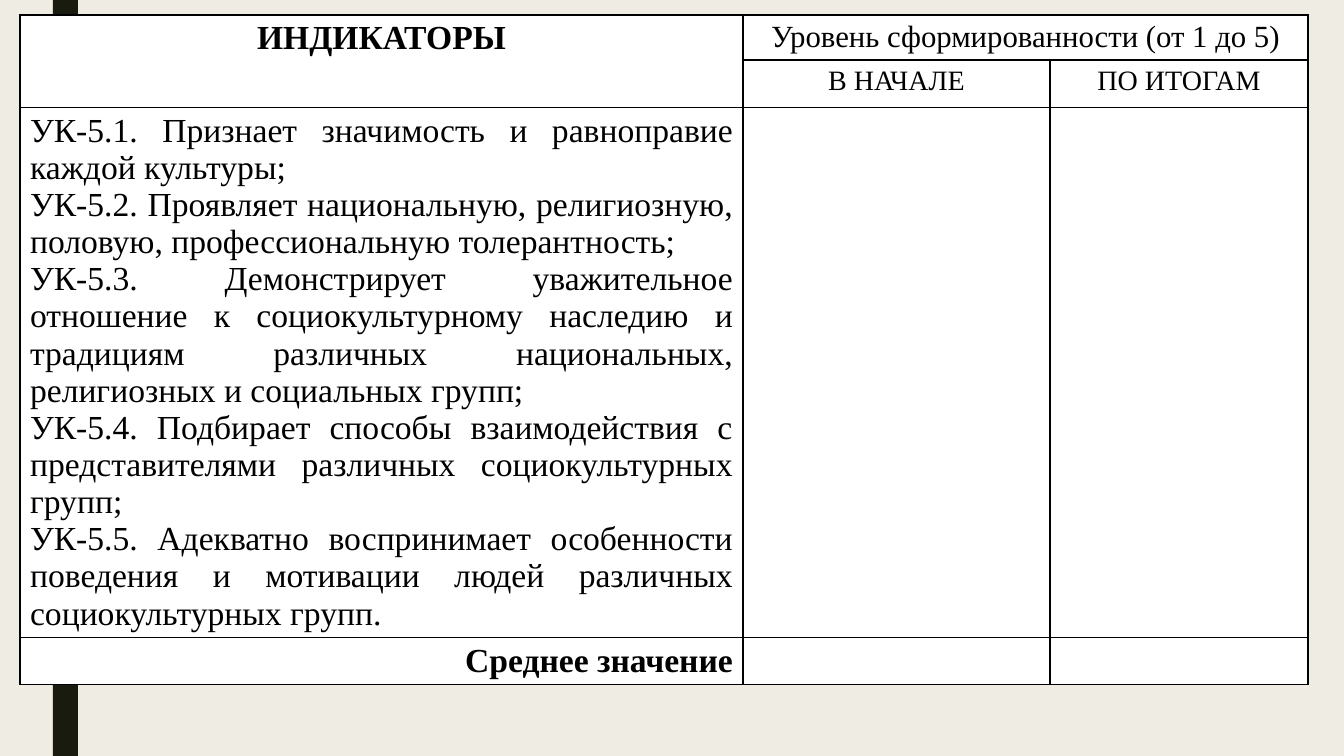
import dataclasses

import pptx
import pptx.dml.color
import pptx.enum.shapes
import pptx.enum.text
import pptx.oxml
import pptx.oxml.ns
import pptx.util

ALIGN = pptx.enum.text.PP_ALIGN
PX = 914400 / 100.8


@dataclasses.dataclass(frozen=True)
class Theme:
    """Colours, font and type sizes of the slide."""

    background: str = "EFEDE3"
    stripe: str = "191B0E"
    cell: str = "FFFFFF"
    ink: str = "000000"
    font: str = "Times New Roman"
    body: int = 24
    level: int = 22
    stage: int = 20
    border: int = 1


class SlideBuilder:
    """Draws themed elements on the current slide, measured in px."""

    def __init__(self, theme, page):
        self.theme = theme
        self.page = page

    def px(self, length):
        return pptx.util.Emu(round(length * PX))

    def colour(self, fill, value):
        fill.solid()
        fill.fore_color.rgb = pptx.dml.color.RGBColor.from_string(value)

    def background(self):
        self.colour(self.page.background.fill, self.theme.background)

    def stripe(self, left, top, width, height):
        bounds = map(self.px, (left, top, width, height))
        shape = self.page.shapes.add_shape(
            pptx.enum.shapes.MSO_SHAPE.RECTANGLE, *bounds
        )
        shape.shadow.inherit = False
        self.colour(shape.fill, self.theme.stripe)
        shape.line.fill.background()

    def table(self, left, top, widths, heights):
        bounds = map(self.px, (left, top, sum(widths), sum(heights)))
        table = self.page.shapes.add_table(len(heights), len(widths), *bounds).table
        table.first_row = False
        table.horz_banding = False
        for column, width in zip(table.columns, widths):
            column.width = self.px(width)
        for row, height in zip(table.rows, heights):
            row.height = self.px(height)
        for cell in table.iter_cells():
            self.colour(cell.fill, self.theme.cell)
            self.borders(cell)
        return table

    def borders(self, cell):
        properties = cell._tc.get_or_add_tcPr()
        width = pptx.util.Pt(self.theme.border)
        for index, side in enumerate(("lnL", "lnR", "lnT", "lnB")):
            line = pptx.oxml.parse_xml(
                f'<a:{side} {pptx.oxml.ns.nsdecls("a")} w="{width}"><a:solidFill>'
                f'<a:srgbClr val="{self.theme.ink}"/></a:solidFill></a:{side}>'
            )
            properties.insert(index, line)

    def cell_text(self, cell, lines, size, align, bold=False):
        cell.text = "\n".join(lines)
        for para in cell.text_frame.paragraphs:
            para.alignment = align
            para.font.name = self.theme.font
            para.font.size = pptx.util.Pt(size)
            para.font.bold = bold
            self.colour(para.font.fill, self.theme.ink)


INDICATORS = [
    "УК-5.1. Признает значимость и равноправие каждой культуры;",
    "УК-5.2. Проявляет национальную, религиозную, половую, "
    "профессиональную толерантность;",
    "УК-5.3. Демонстрирует уважительное отношение к социокультурному наследию "
    "и традициям различных национальных, религиозных и социальных групп;",
    "УК-5.4. Подбирает способы взаимодействия с представителями различных "
    "социокультурных групп;",
    "УК-5.5. Адекватно воспринимает особенности поведения и мотивации людей "
    "различных социокультурных групп.",
]


def main():
    theme = Theme()
    deck = pptx.Presentation()
    deck.slide_width = pptx.util.Emu(round(1344 * PX))
    deck.slide_height = pptx.util.Emu(round(756 * PX))
    builder = SlideBuilder(theme, deck.slides.add_slide(deck.slide_layouts[6]))

    builder.background()
    builder.stripe(53, 0, 25, 756)
    table = builder.table(20, 15, widths=(723, 307, 258), heights=(45, 47, 530, 47))
    table.cell(0, 0).merge(table.cell(1, 0))
    table.cell(0, 1).merge(table.cell(0, 2))

    builder.cell_text(
        table.cell(0, 0), ["ИНДИКАТОРЫ"], theme.body, ALIGN.CENTER, bold=True
    )
    builder.cell_text(
        table.cell(0, 1),
        ["Уровень сформированности (от 1 до 5)"],
        theme.level,
        ALIGN.CENTER,
    )
    for column, stage in enumerate(("В НАЧАЛЕ", "ПО ИТОГАМ"), start=1):
        builder.cell_text(table.cell(1, column), [stage], theme.stage, ALIGN.CENTER)
    builder.cell_text(table.cell(2, 0), INDICATORS, theme.body, ALIGN.JUSTIFY)
    builder.cell_text(
        table.cell(3, 0), ["Среднее значение"], theme.body, ALIGN.RIGHT, bold=True
    )

    deck.save("out.pptx")


if __name__ == "__main__":
    main()
